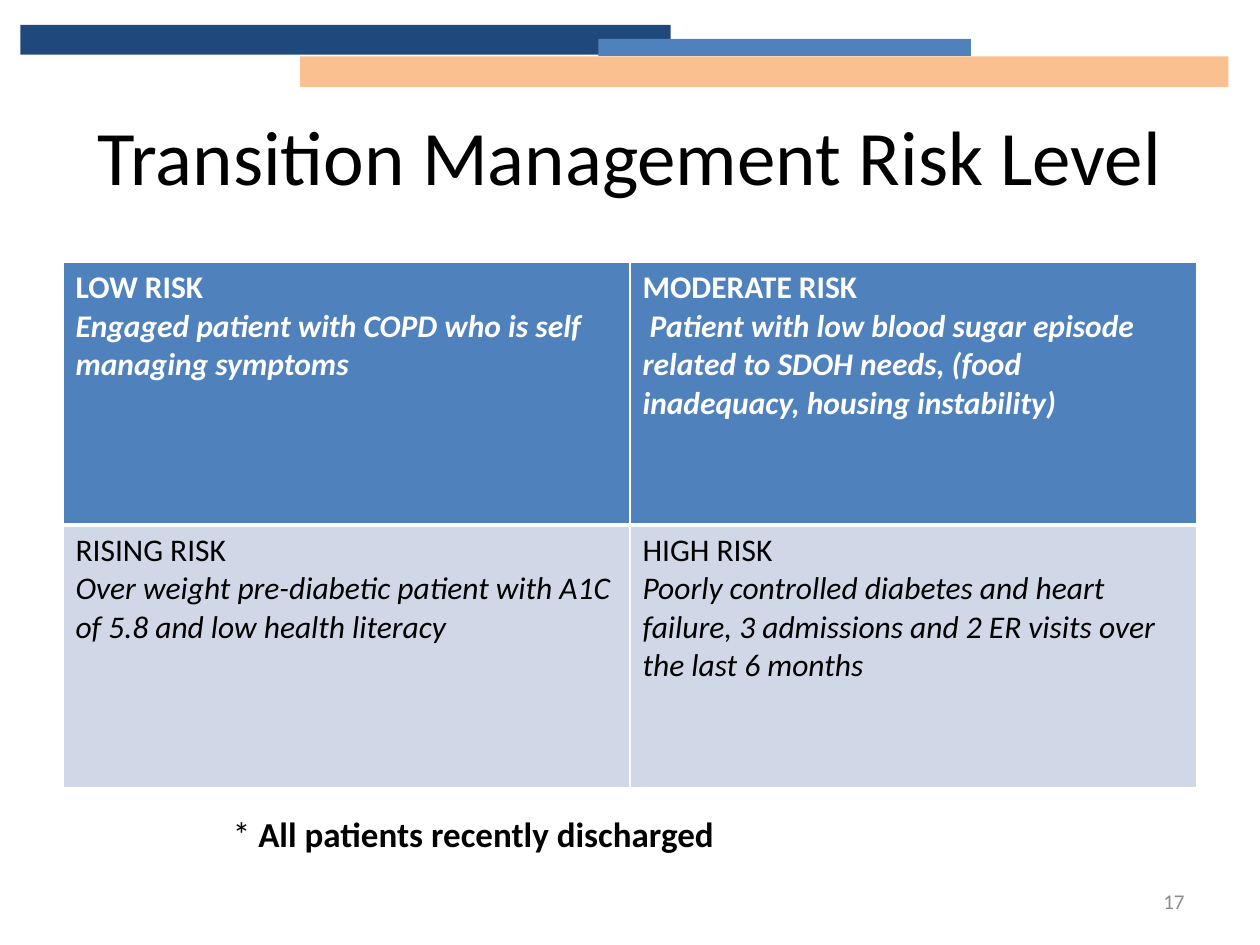
import pptx
import pptx.util
import pptx.dml.color
import pptx.enum.shapes
import pptx.enum.text
import lxml.etree
from dataclasses import dataclass

Pt = pptx.util.Pt
Align = pptx.enum.text.PP_ALIGN
Anchor = pptx.enum.text.MSO_ANCHOR


@dataclass(frozen=True)
class Theme:
    font: str = "Calibri"
    navy: str = "1F497D"
    blue: str = "4F81BD"
    peach: str = "FAC090"
    pale: str = "D0D8E8"
    white: str = "FFFFFF"
    black: str = "000000"
    grey: str = "8C8C8C"
    title: int = 44
    note: int = 20
    body: int = 18
    number: int = 12


theme = Theme()


def add_span(para, text, size, color, bold=False, italic=False):
    span = para.add_run()
    span.text = text
    span.font.name = theme.font
    span.font.size = Pt(size)
    span.font.bold = bold
    span.font.italic = italic
    span.font.color.rgb = pptx.dml.color.RGBColor.from_string(color)


def add_box(left, top, width, height, align, anchor):
    box = page.shapes.add_textbox(Pt(left), Pt(top), Pt(width), Pt(height))
    box.text_frame.word_wrap = True
    box.text_frame.vertical_anchor = anchor
    para = box.text_frame.paragraphs[0]
    para.alignment = align
    return para


deck = pptx.Presentation()
deck.slide_width, deck.slide_height = Pt(720), Pt(540)
page = deck.slides.add_slide(deck.slide_layouts[6])

# Header bars
for left, top, width, height, color in [
    (171.5, 32.2, 530.5, 17.5, theme.peach),
    (11.6, 14.2, 371.6, 17, theme.navy),
    (341.9, 22.2, 213, 9.8, theme.blue),
]:
    bar = page.shapes.add_shape(
        pptx.enum.shapes.MSO_SHAPE.RECTANGLE, Pt(left), Pt(top), Pt(width), Pt(height))
    bar.shadow.inherit = False
    bar.fill.solid()
    bar.fill.fore_color.rgb = pptx.dml.color.RGBColor.from_string(color)
    bar.line.fill.background()

# Title
para = add_box(36, 43.2, 648, 90, Align.CENTER, Anchor.MIDDLE)
add_span(para, "Transition Management Risk Level", theme.title, theme.black)

# Risk grid
risks = [
    [("LOW RISK", "Engaged patient with COPD who is self managing symptoms"),
     ("MODERATE RISK", " Patient with low blood sugar episode related to SDOH needs, "
                       "(food inadequacy, housing instability)")],
    [("RISING RISK", "Over weight pre-diabetic patient with A1C of 5.8 and low health literacy"),
     ("HIGH RISK", "Poorly controlled diabetes and heart failure, 3 admissions "
                   "and 2 ER visits over the last 6 months")],
]
row_styles = [  # fill, text colour, bold, top and bottom border widths
    (theme.blue, theme.white, True, 1, 3),
    (theme.pale, theme.black, False, 3, 1),
]
grid = page.shapes.add_table(2, 2, Pt(36), Pt(150), Pt(648), Pt(300)).table
for row, (fill, color, bold, top_width, bottom_width) in enumerate(row_styles):
    for column, (level, example) in enumerate(risks[row]):
        cell = grid.cell(row, column)
        cell.fill.solid()
        cell.fill.fore_color.rgb = pptx.dml.color.RGBColor.from_string(fill)
        add_span(cell.text_frame.paragraphs[0], level, theme.body, color, bold)
        add_span(cell.text_frame.add_paragraph(), example, theme.body, color, bold, True)

        # Borders stand before the fill in the cell properties
        properties = cell._tc.get_or_add_tcPr()
        borders = [("lnL", 1), ("lnR", 1), ("lnT", top_width), ("lnB", bottom_width)]
        for position, (side, width) in enumerate(borders):
            border = lxml.etree.Element(pptx.oxml.ns.qn(f"a:{side}"), w=str(Pt(width)))
            solid = lxml.etree.SubElement(border, pptx.oxml.ns.qn("a:solidFill"))
            lxml.etree.SubElement(solid, pptx.oxml.ns.qn("a:srgbClr"), val=theme.white)
            properties.insert(position, border)

# Slide number
para = add_box(516, 500.5, 168, 28.75, Align.RIGHT, Anchor.MIDDLE)
add_span(para, "17", theme.number, theme.grey)

# Footnote
para = add_box(126, 460.8, 540, 31.5, Align.LEFT, Anchor.TOP)
add_span(para, "* ", theme.note, theme.black)
add_span(para, "All patients recently discharged", theme.note, theme.black, True)

deck.save("out.pptx")
